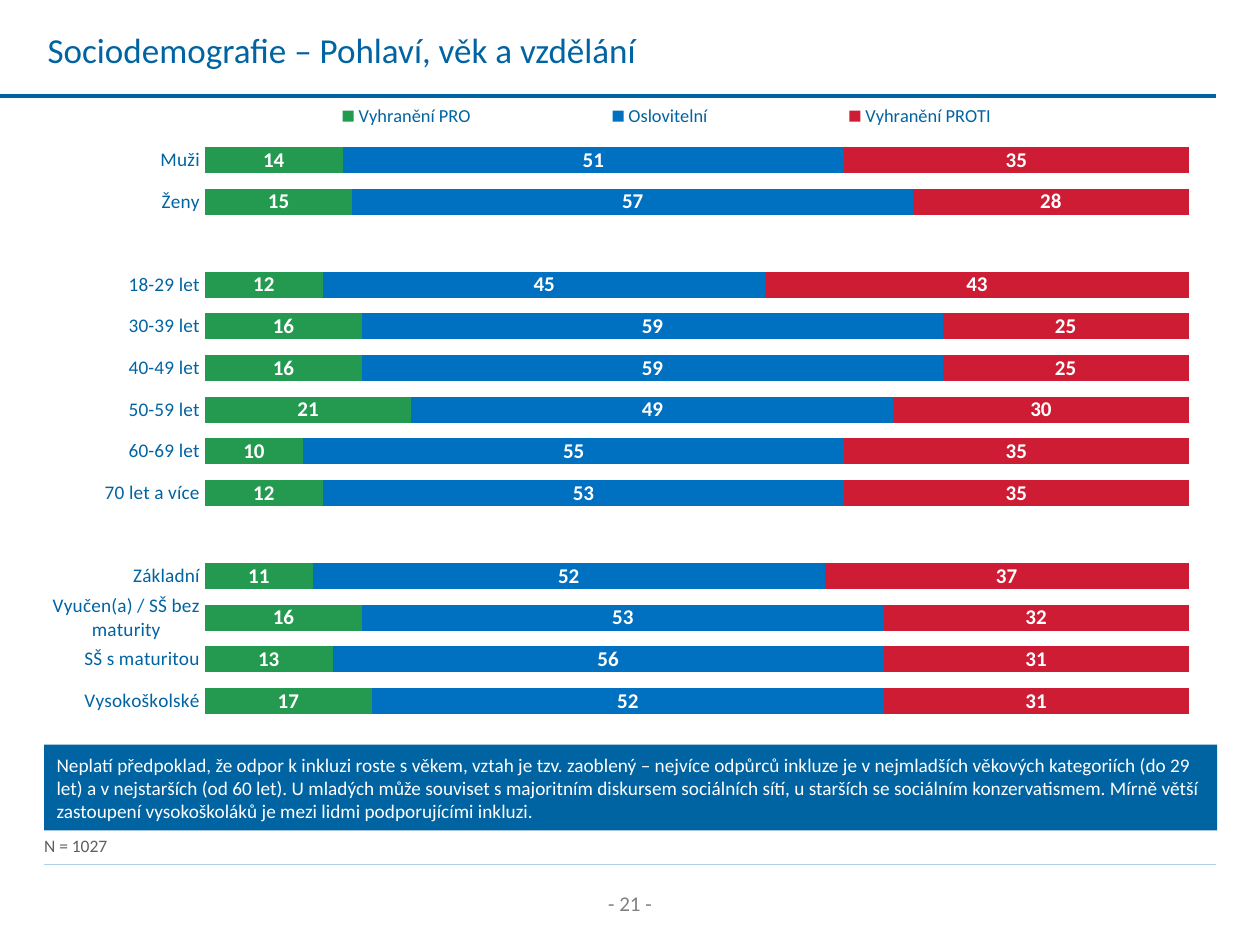
from dataclasses import dataclass
from typing import Any

from lxml.etree import SubElement
from pptx import Presentation
from pptx.chart.data import CategoryChartData
from pptx.dml.color import RGBColor
from pptx.enum.chart import XL_CHART_TYPE, XL_LABEL_POSITION, XL_LEGEND_POSITION
from pptx.enum.chart import XL_TICK_LABEL_POSITION, XL_TICK_MARK
from pptx.enum.shapes import MSO_CONNECTOR, MSO_SHAPE
from pptx.enum.text import MSO_ANCHOR, PP_ALIGN
from pptx.oxml.ns import qn
from pptx.util import Cm, Pt

NAVY = RGBColor(0x00, 0x63, 0xA2)
BLUE = RGBColor(0x00, 0x70, 0xC0)
GREEN = RGBColor(0x24, 0x9A, 0x50)
RED = RGBColor(0xCE, 0x1C, 0x34)
PALE_BLUE = RGBColor(0xAF, 0xCF, 0xEA)
GREY = RGBColor(0x80, 0x80, 0x80)
DARK_GREY = RGBColor(0x5F, 0x5F, 0x5F)
WHITE = RGBColor(0xFF, 0xFF, 0xFF)

CATEGORIES = [
    "Muži", "Ženy", "",
    "18-29 let", "30-39 let", "40-49 let", "50-59 let", "60-69 let", "70 let a více", "",
    "Základní", "Vyučen(a) / SŠ bez maturity", "SŠ s maturitou", "Vysokoškolské",
]
ATTITUDES = [
    ("Vyhranění PRO", GREEN, [14, 15, None, 12, 16, 16, 21, 10, 12, None, 11, 16, 13, 17]),
    ("Oslovitelní", BLUE, [51, 57, None, 45, 59, 59, 49, 55, 53, None, 52, 53, 56, 52]),
    ("Vyhranění PROTI", RED, [35, 28, None, 43, 25, 25, 30, 35, 35, None, 37, 32, 31, 31]),
]
FINDING = (
    "Neplatí předpoklad, že odpor k inkluzi roste s věkem, vztah je tzv. zaoblený – "
    "nejvíce odpůrců inkluze je v nejmladších věkových kategoriích (do 29 let) a v "
    "nejstarších (od 60 let). U mladých může souviset s majoritním diskursem sociálních "
    "sítí, u starších se sociálním konzervatismem. Mírně větší zastoupení vysokoškoláků "
    "je mezi lidmi podporujícími inkluzi."
)


def format_font(font, size, color, bold=False, name="Calibri"):
    font.name, font.size, font.bold = name, Pt(size), bold
    font.color.rgb = color


def write_text(frame, text, align=PP_ALIGN.LEFT, anchor=MSO_ANCHOR.TOP, **font_format):
    frame.word_wrap = True
    frame.vertical_anchor = anchor
    para = frame.paragraphs[0]
    para.alignment = align
    span = para.add_run()
    span.text = text
    format_font(span.font, **font_format)


def place_in_chart(previous, x, y, width, height, inner=False):
    parent = previous.getparent() if not inner else previous
    for old in parent.findall(qn("c:layout")):
        parent.remove(old)
    layout = SubElement(parent, qn("c:layout"))
    manual = SubElement(layout, qn("c:manualLayout"))
    settings = [("layoutTarget", "inner")] if inner else []
    settings += [("xMode", "edge"), ("yMode", "edge"),
                 ("x", x), ("y", y), ("w", width), ("h", height)]
    for tag, value in settings:
        SubElement(manual, qn(f"c:{tag}")).set("val", str(value))
    if inner:
        parent.insert(0, layout)
    else:
        previous.addnext(layout)


@dataclass
class SlideBuilder:
    """Draws the elements of the current page in the house style."""

    page: Any

    def rule(self, left, right, top, color, weight):
        line = self.page.shapes.add_connector(
            MSO_CONNECTOR.STRAIGHT, Cm(left), Cm(top), Cm(right), Cm(top))
        line.line.color.rgb = color
        line.line.width = Pt(weight)
        SubElement(line._element.spPr, qn("a:effectLst"))

    def text(self, text, left, top, width, height, inset=0.25, **text_format):
        box = self.page.shapes.add_textbox(Cm(left), Cm(top), Cm(width), Cm(height))
        box.text_frame.margin_left = Cm(inset)
        write_text(box.text_frame, text, **text_format)

    def callout(self, text, left, top, width, height, **text_format):
        box = self.page.shapes.add_shape(
            MSO_SHAPE.RECTANGLE, Cm(left), Cm(top), Cm(width), Cm(height))
        box.shadow.inherit = False
        box.fill.solid()
        box.fill.fore_color.rgb = NAVY
        box.line.fill.background()
        write_text(box.text_frame, text, anchor=MSO_ANCHOR.MIDDLE, **text_format)

    def stacked_bars(self, categories, series_rows, left, top, width, height):
        data = CategoryChartData(number_format="#,##0")
        data.categories = categories
        for name, _, values in series_rows:
            data.add_series(name, values)
        chart = self.page.shapes.add_chart(
            XL_CHART_TYPE.BAR_STACKED, Cm(left), Cm(top), Cm(width), Cm(height), data).chart
        chart.has_title = False
        format_font(chart.font, 18, DARK_GREY)
        self.style_axes(chart)

        plot = chart.plots[0]
        plot.gap_width, plot.overlap, plot.vary_by_categories = 60, 100, False
        for series, (_, color, _) in zip(plot.series, series_rows):
            series.format.fill.solid()
            series.format.fill.fore_color.rgb = color
            labels = series.data_labels
            labels.show_value = True
            labels.position = XL_LABEL_POSITION.CENTER
            labels.number_format, labels.number_format_is_linked = "#,##0", False
            format_font(labels.font, 12, WHITE, bold=True)

        chart.has_legend = True
        legend = chart.legend
        legend.position = XL_LEGEND_POSITION.TOP
        legend.include_in_layout = False
        format_font(legend.font, 10.5, NAVY)
        place_in_chart(legend._element.find(qn("c:legendPos")), 0.14, 0, 0.79, 0.05)
        plot_area = chart._chartSpace.chart.plotArea
        place_in_chart(plot_area, 0.138, 0.062, 0.845, 0.938, inner=True)

    def style_axes(self, chart):
        for axis in (chart.category_axis, chart.value_axis):
            axis.major_tick_mark = axis.minor_tick_mark = XL_TICK_MARK.NONE
            axis.has_major_gridlines = False
            axis.format.line.fill.background()
        chart.category_axis.reverse_order = True
        format_font(chart.category_axis.tick_labels.font, 11, NAVY)
        chart.value_axis.tick_label_position = XL_TICK_LABEL_POSITION.NONE
        chart.value_axis.minimum_scale, chart.value_axis.maximum_scale = 0, 100


def main():
    deck = Presentation()
    deck.slide_width, deck.slide_height = Cm(25.4), Cm(19.05)
    slide = SlideBuilder(deck.slides.add_slide(deck.slide_layouts[6]))
    margin, right = 0.89, 24.51

    slide.rule(margin, right, 17.42, PALE_BLUE, 0.5)
    slide.text("- 21 -", 11.1, 17.83, 3.2, 0.76, align=PP_ALIGN.CENTER, size=12, color=GREY)
    slide.rule(0, right, 1.93, NAVY, 2.25)
    slide.text("Sociodemografie – Pohlaví, věk a vzdělání", 0.71, 0, 22.66, 2.01,
               anchor=MSO_ANCHOR.MIDDLE, size=20, color=NAVY)
    slide.stacked_bars(CATEGORIES, ATTITUDES, margin, 2.03, 23.47, 12.52)
    slide.callout(FINDING, margin, 15.01, 23.65, 1.73, size=11, color=WHITE)
    slide.text("N = 1027", margin, 16.71, 17.25, 0.69, inset=0, size=10, color=DARK_GREY)
    deck.save("out.pptx")


if __name__ == "__main__":
    main()
